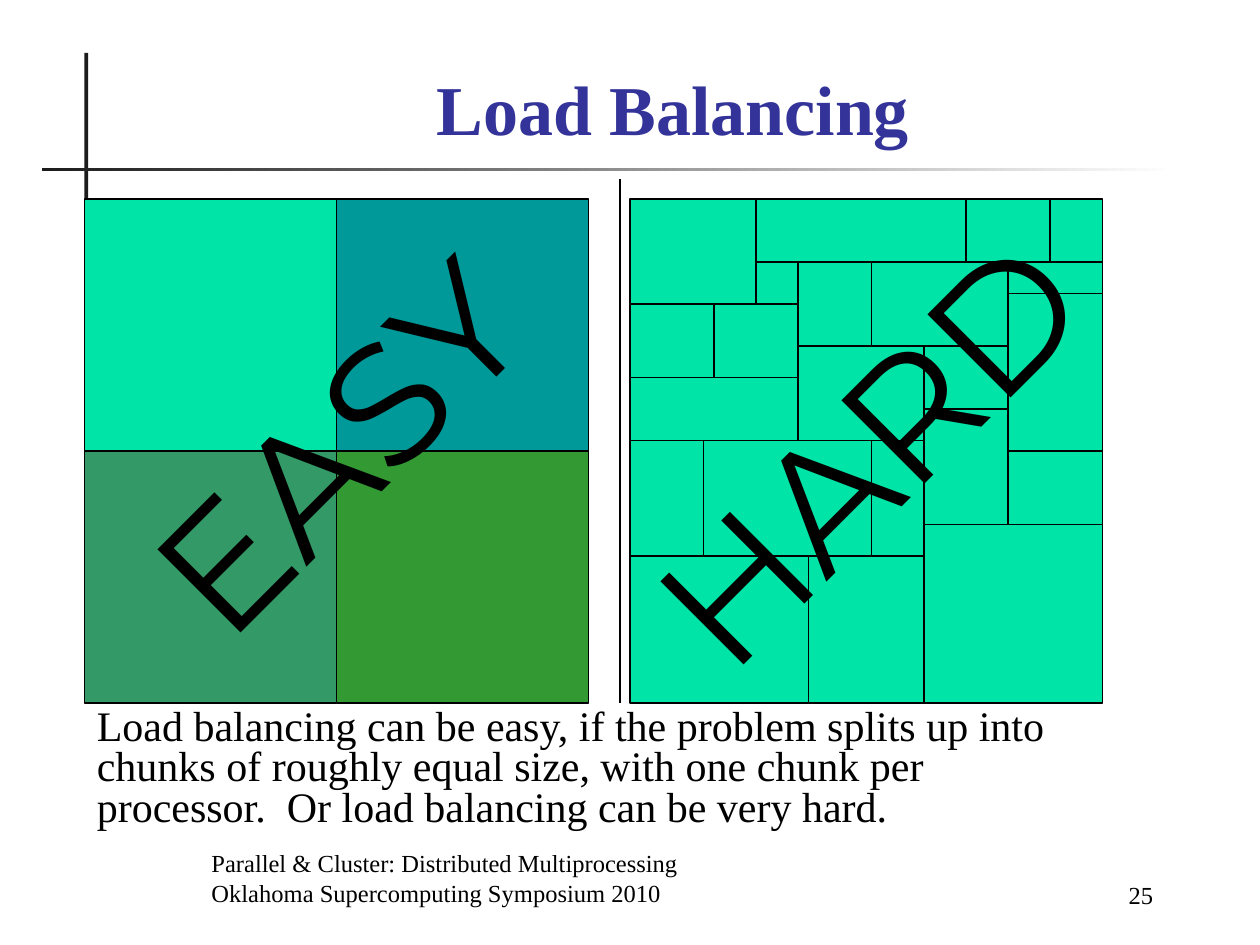
"""Build the Load Balancing slide."""
import pptx
import pptx.dml.color
import pptx.enum.shapes
import pptx.enum.text
import pptx.oxml
import pptx.util
from pptx.dml.color import RGBColor
from pptx.enum.text import MSO_ANCHOR, PP_ALIGN
from pptx.util import Inches

BLACK = RGBColor(0x00, 0x00, 0x00)
WHITE = RGBColor(0xFF, 0xFF, 0xFF)
CHARCOAL = RGBColor(0x1C, 0x1C, 0x1C)
NAVY = RGBColor(0x33, 0x33, 0x99)
MINT = RGBColor(0x00, 0xE4, 0xA8)
TEAL = RGBColor(0x00, 0x99, 0x99)
SEA = RGBColor(0x33, 0x99, 0x66)
GREEN = RGBColor(0x33, 0x99, 0x33)

SERIF = "Times New Roman"
SANS = "Montserrat"
TOP = 1.58
UNIT = 1 / 12
HARD_CHUNKS = [
    (0, 0, 12, 10), (12, 0, 20, 6), (32, 0, 8, 6), (40, 0, 5, 6),
    (12, 6, 4, 4), (16, 6, 7, 8), (23, 6, 13, 8), (36, 6, 9, 3),
    (0, 10, 8, 7), (8, 10, 8, 7), (36, 9, 9, 15), (16, 14, 12, 9),
    (28, 14, 8, 6), (0, 17, 16, 6), (28, 20, 8, 11), (0, 23, 7, 11),
    (7, 23, 16, 11), (23, 23, 5, 11), (36, 24, 9, 7), (28, 31, 17, 17),
    (0, 34, 17, 14), (17, 34, 11, 14),
]


class SlideBuilder:
    """Hold the slide and its shared style."""

    def __init__(self, prs):
        self.s = prs.slides.add_slide(prs.slide_layouts[5])

    def rect(self, x, y, w, h, color, outlined=True):
        """Add a filled rectangle."""
        sp = self.s.shapes.add_shape(
            pptx.enum.shapes.MSO_SHAPE.RECTANGLE,
            Inches(x), Inches(y), Inches(w), Inches(h))
        sp.shadow.inherit = False
        sp.fill.solid()
        sp.fill.fore_color.rgb = color
        if outlined:
            sp.line.color.rgb = BLACK
            sp.line.width = pptx.util.Pt(0.75)
        else:
            sp.line.fill.background()
        return sp

    def fading_rule(self, x, y, w, h):
        """Add a rule that fades to white."""
        sp = self.rect(x, y, w, h, CHARCOAL, outlined=False)
        sp.fill.gradient()
        sp.fill.gradient_angle = 0
        for stop, color, position in zip(sp.fill.gradient_stops, (CHARCOAL, WHITE), (0, 1)):
            stop.color.rgb = color
            stop.position = position

    def line(self, x1, y1, x2, y2):
        """Add a thin straight line."""
        cxn = self.s.shapes.add_connector(
            pptx.enum.shapes.MSO_CONNECTOR.STRAIGHT,
            Inches(x1), Inches(y1), Inches(x2), Inches(y2))
        cxn.line.color.rgb = BLACK
        cxn.line.width = pptx.util.Pt(0.75)
        cxn._element.spPr.append(pptx.oxml.parse_xml(
            '<a:effectLst xmlns:a="http://schemas.openxmlformats.org/drawingml/2006/main"/>'))

    def set_text(self, sp, lines, size, font=SERIF, color=BLACK, bold=False,
                 align=PP_ALIGN.LEFT, anchor=MSO_ANCHOR.TOP, spacing=1.0):
        """Fill a shape with styled paragraphs."""
        tf = sp.text_frame
        tf.text = "\n".join(lines)
        tf.word_wrap = True
        tf.auto_size = pptx.enum.text.MSO_AUTO_SIZE.NONE
        tf.vertical_anchor = anchor
        for p in tf.paragraphs:
            p.alignment = align
            p.line_spacing = spacing
            p.font.name = font
            p.font.size = pptx.util.Pt(size)
            p.font.bold = bold
            p.font.color.rgb = color

    def title(self, x, y, w, h, text):
        """Place and format the title."""
        sp = self.s.shapes.title
        sp.left, sp.top, sp.width, sp.height = map(Inches, (x, y, w, h))
        self.set_text(sp, [text], 40, color=NAVY, bold=True,
                      align=PP_ALIGN.CENTER, anchor=MSO_ANCHOR.BOTTOM)

    def text(self, x, y, w, h, lines, size, rotation=0, **style):
        """Add a text box."""
        sp = self.s.shapes.add_textbox(Inches(x), Inches(y), Inches(w), Inches(h))
        sp.rotation = rotation
        self.set_text(sp, lines, size, **style)


def main():
    """Build and save the slide."""
    prs = pptx.Presentation()
    prs.slide_width, prs.slide_height = Inches(10), Inches(7.5)
    b = SlideBuilder(prs)

    b.rect(0.67, 0.42, 0.03, 1.15, CHARCOAL, outlined=False)
    b.fading_rule(0.33, 1.33, 9, 0.03)
    b.title(1.08, 0.5, 8.52, 0.74, "Load Balancing")

    for i, color in enumerate((MINT, TEAL, SEA, GREEN)):
        row, col = divmod(i, 2)
        b.rect(0.67 + 2 * col, TOP + 2 * row, 2, 2, color)
    b.line(4.92, 1.42, 4.92, 5.58)
    for x, y, w, h in HARD_CHUNKS:
        b.rect(5 + x * UNIT, TOP + y * UNIT, w * UNIT, h * UNIT, MINT)

    b.text(0.67, 5.58, 8.17, 1.06,
           ["Load balancing can be easy, if the problem splits up into chunks of "
            "roughly equal size, with one chunk per processor.  Or load balancing "
            "can be very hard."], 24, spacing=0.8)
    for word, x, y, w in (("EASY", 0.5, 2.67, 4.33), ("HARD", 4.65, 2.71, 4.44)):
        b.text(x, y, w, 1.7, [word], 96, rotation=315, font=SANS, align=PP_ALIGN.CENTER)

    b.text(1.58, 6.75, 6.08, 0.5,
           ["Parallel & Cluster: Distributed Multiprocessing",
            "Oklahoma Supercomputing Symposium 2010"], 14, anchor=MSO_ANCHOR.BOTTOM)
    b.text(7.83, 6.77, 1.42, 0.5, ["25"], 14,
           align=PP_ALIGN.RIGHT, anchor=MSO_ANCHOR.BOTTOM)
    prs.save("out.pptx")


if __name__ == "__main__":
    main()
